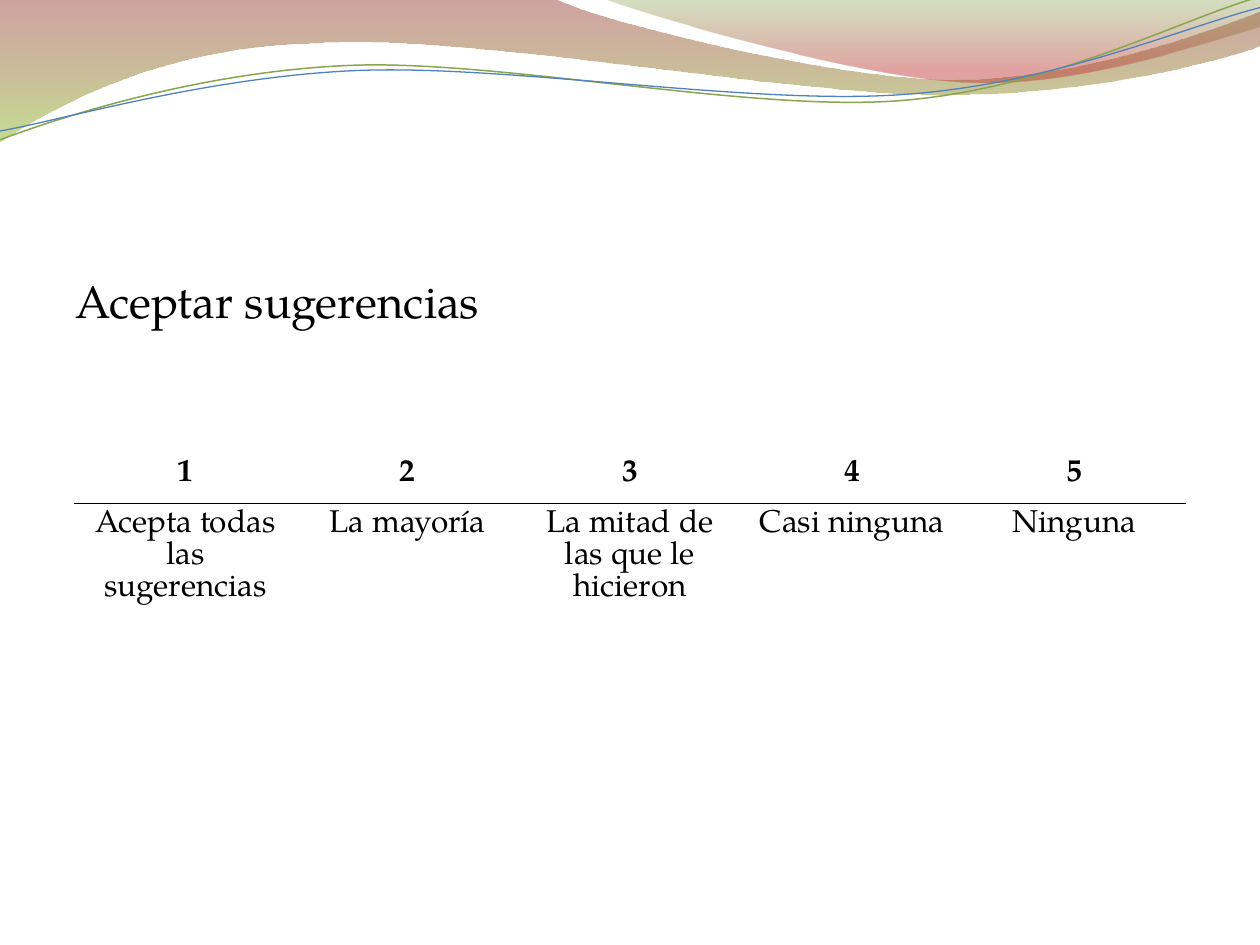
import math
from dataclasses import dataclass
from typing import Optional

from lxml import etree
from pptx import Presentation
from pptx import util as u
from pptx.dml.color import RGBColor
from pptx.enum import text
from pptx.oxml import ns

COLUMNS = 10  # the slide is a grid of 10 columns by 7.5 rows
ROWS = 7.5
UNIT = u.Inches(1)
LINE_TILT = -2.7  # degrees
FONT = "TeX Gyre Pagella"

BLACK = RGBColor(0x00, 0x00, 0x00)
WHITE = RGBColor(0xFF, 0xFF, 0xFF)
DARK_RED = RGBColor(0x97, 0x33, 0x30)
RED = RGBColor(0xBE, 0x33, 0x30)
LIME = RGBColor(0x95, 0xC2, 0x38)
OLIVE = RGBColor(0x76, 0x95, 0x37)
GREEN = RGBColor(0x89, 0xA5, 0x4F)
BLUE = RGBColor(0x4F, 0x81, 0xBD)


@dataclass(frozen=True)
class Stop:
    position: float
    color: RGBColor
    opacity: int  # per cent


@dataclass(frozen=True)
class Wave:
    """Start point, then segments: two numbers for a line, six for a Bézier."""
    box: tuple[float, float, float, float]
    start: tuple[float, float]
    segments: tuple[tuple[float, ...], ...]
    stops: tuple[Stop, ...] = ()
    line: Optional[RGBColor] = None
    width: float = 0
    tilt: float = 0


@dataclass(frozen=True)
class Level:
    score: str
    meaning: str


WAVES = (
    Wave((-0.01, -0.01, 10.02, 1.14), (0, 0),
         ((4.4, -0.01), (4.76, 0.17, 6.64, 0.63, 7.58, 0.63),
          (8.53, 0.63, 9.58, 0.26, 10, 0.09), (10.01, 0.36),
          (9.83, 0.44, 8.7, 0.76, 7.46, 0.75),
          (6.22, 0.75, 3.82, 0.28, 2.57, 0.34),
          (1.29, 0.36, 0.46, 0.83, -0.01, 1.13), (0, 0)),
         stops=(Stop(0, DARK_RED, 45), Stop(1, LIME, 55))),
    Wave((4.79, -0.01, 5.21, 0.7), (4.79, -0.01),
         ((5.09, 0.11, 6.82, 0.62, 7.69, 0.65),
          (8.56, 0.69, 9.61, 0.32, 10, 0.21), (10, 0), (4.79, -0.01)),
         stops=(Stop(0, OLIVE, 30), Stop(0.8, RED, 45))),
    Wave((-0.02, 0.22, 10.02, 0.71), (0, 1.11),
         ((0.48, 0.93, 1.58, 0.57, 2.77, 0.52),
          (3.95, 0.47, 5.93, 0.89, 7.13, 0.8),
          (8.33, 0.71, 9.38, 0.15, 9.98, -0.02)),
         line=GREEN, width=0.85, tilt=LINE_TILT),
    Wave((-0.02, 0.3, 10.03, 0.58), (0, 1.04),
         ((0.47, 0.96, 1.64, 0.61, 2.83, 0.56),
          (4.03, 0.51, 5.97, 0.84, 7.17, 0.75),
          (8.36, 0.67, 9.41, 0.21, 10, 0.06)),
         line=BLUE, width=0.75, tilt=LINE_TILT),
)

LEVELS = (
    Level("1", "Acepta todas las sugerencias"),
    Level("2", "La mayoría"),
    Level("3", "La mitad de las que le hicieron"),
    Level("4", "Casi ninguna"),
    Level("5", "Ninguna"),
)


def grid(value: float) -> int:
    return round(value * UNIT)


def to_box(wave: Wave, x: float, y: float) -> tuple[int, int]:
    """Turn a slide position into one inside the wave's untilted box."""
    left, top, width, height = wave.box
    dx, dy = x - left - width / 2, y - top - height / 2
    angle = math.radians(-wave.tilt)
    return (grid(dx * math.cos(angle) - dy * math.sin(angle) + width / 2),
            grid(dx * math.sin(angle) + dy * math.cos(angle) + height / 2))


def add_outline(s, wave: Wave):
    """Build the wave from its end points, then bend its curved segments."""
    builder = s.shapes.build_freeform(*to_box(wave, *wave.start))
    builder.add_line_segments([to_box(wave, *seg[-2:]) for seg in wave.segments],
                              close=bool(wave.stops))
    sp = builder.convert_to_shape()
    sp.left, sp.top, sp.width, sp.height = map(grid, wave.box)
    sp.rotation = wave.tilt
    outline = next(sp._element.iter(ns.qn("a:path")))
    outline.set("w", str(sp.width))
    outline.set("h", str(sp.height))
    for step, numbers in zip(list(outline), (wave.start, *wave.segments)):
        if len(numbers) == 6:
            step.tag, old = ns.qn("a:cubicBezTo"), step
            curve = etree.Element(ns.qn("a:cubicBezTo"))
            outline.replace(old, curve)
            step = curve
        for point in list(step):
            step.remove(point)
        for x, y in zip(numbers[::2], numbers[1::2]):
            px, py = to_box(wave, x, y)
            etree.SubElement(step, ns.qn("a:pt"), x=str(px), y=str(py))
    return sp


def draw_wave(s, wave: Wave) -> None:
    sp = add_outline(s, wave)
    sp.shadow.inherit = False
    if wave.line is None:
        sp.line.fill.background()
    else:
        sp.line.color.rgb = wave.line
        sp.line.width = u.Pt(wave.width)
    if not wave.stops:
        sp.fill.background()
        return
    sp.fill.gradient()
    sp.fill.gradient_angle = 270
    for target, stop in zip(sp.fill.gradient_stops, wave.stops):
        target.position = stop.position
        target.color.rgb = stop.color
    for color, stop in zip(sp.fill._xPr.iter(ns.qn("a:srgbClr")), wave.stops):
        etree.SubElement(color, ns.qn("a:alpha"), val=str(stop.opacity * 1000))


def write(tf, content: str, *, size: float, bold: bool = False,
          align=text.PP_ALIGN.LEFT, before: float = 0) -> None:
    p = tf.paragraphs[0]
    p.alignment = align
    p.space_before = u.Pt(before)
    r = p.add_run()
    r.text = content
    r.font.name = FONT
    r.font.size = u.Pt(size)
    r.font.bold = bold
    r.font.color.rgb = BLACK


def set_borders(cell, **colors: RGBColor) -> None:
    tc_pr = cell._tc.get_or_add_tcPr()
    for side in "LRTB":
        ln = etree.SubElement(tc_pr, ns.qn(f"a:ln{side}"), w=str(u.Pt(1)))
        fill = etree.SubElement(ln, ns.qn("a:solidFill"))
        etree.SubElement(fill, ns.qn("a:srgbClr"), val=str(colors.get(side, WHITE)))


def draw_scale(s, levels: tuple[Level, ...]) -> None:
    heights = (u.Pt(29.2), grid(1))
    frame = s.shapes.add_table(2, len(levels), grid(0.59), grid(3.59),
                               grid(8.82), sum(heights))
    table = frame.table
    table.first_row = table.horz_banding = False
    for row, height in zip(table.rows, heights):
        row.height = height
    for column, level in enumerate(levels):
        for row, content in enumerate((level.score, level.meaning)):
            cell = table.cell(row, column)
            set_borders(cell, **{"BT"[row]: BLACK})
            cell.fill.solid()
            cell.fill.fore_color.rgb = WHITE
            write(cell.text_frame, content, size=18, bold=row == 0,
                  align=text.PP_ALIGN.CENTER)


def main() -> None:
    prs = Presentation()
    prs.slide_width, prs.slide_height = grid(COLUMNS), grid(ROWS)
    s = prs.slides.add_slide(prs.slide_layouts[5])
    # Wavy header
    for wave in WAVES:
        draw_wave(s, wave)
    # Title
    title = s.shapes.title
    title.left, title.top, title.width, title.height = map(grid, (0.5, 2.12, 9, 4.8))
    tf = title.text_frame
    tf.auto_size = text.MSO_AUTO_SIZE.NONE
    tf.vertical_anchor = text.MSO_ANCHOR.TOP
    write(tf, "Aceptar sugerencias", size=26, before=6)
    # Rating scale
    draw_scale(s, LEVELS)
    prs.save("out.pptx")


if __name__ == "__main__":
    main()
